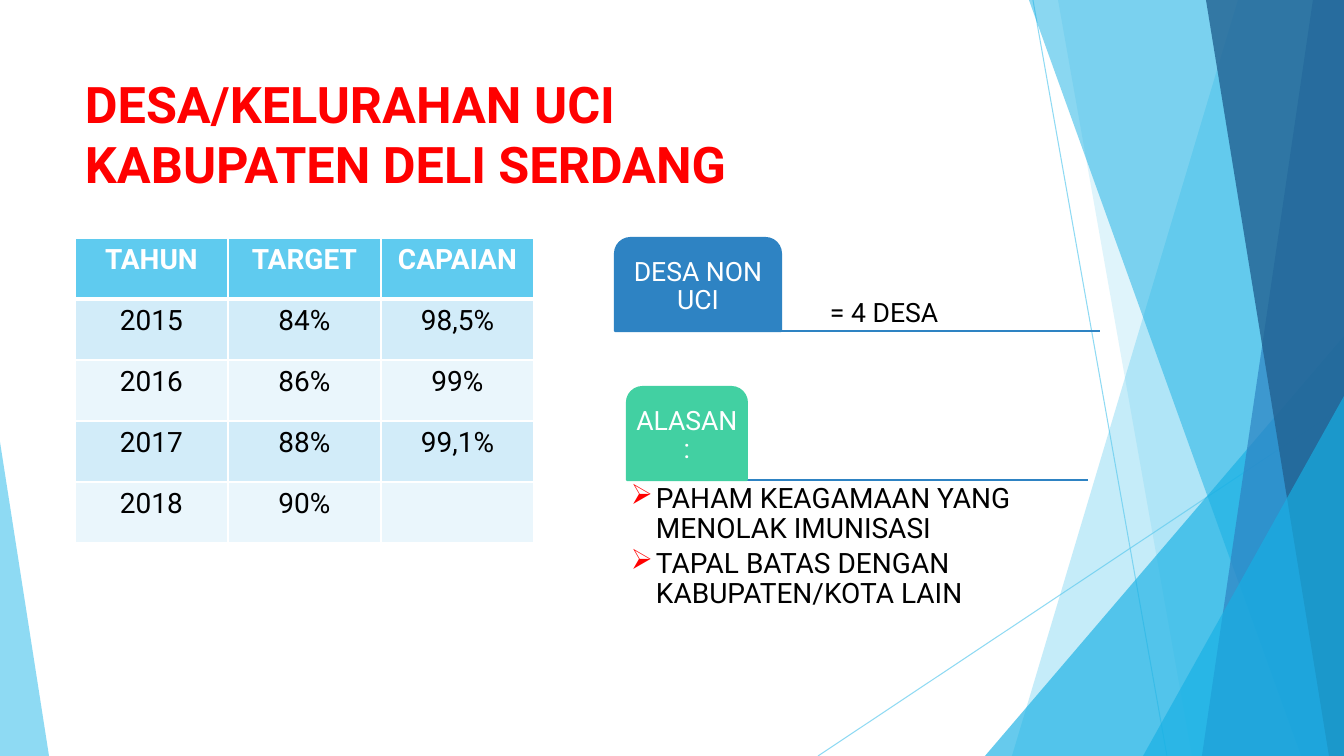
from lxml import etree
from pptx import Presentation
from pptx.dml.color import RGBColor
from pptx.enum.shapes import MSO_CONNECTOR, MSO_SHAPE
from pptx.enum.text import MSO_ANCHOR, PP_ALIGN
from pptx.oxml.ns import qn
from pptx.util import Pt

PX = 914400 / 100.8
FONT = "Roboto"
SKY, AZURE, BLUE, NAVY, GREEN = "5FCBEF", "17B0E4", "2E83C3", "226292", "42D0A2"
WHITE, BLACK, RED = "FFFFFF", "000000", "FF0000"
BANDS = ("D2ECF9", "EAF6FC")

ROWS = [
    ("TAHUN", "TARGET", "CAPAIAN"),
    ("2015", "84%", "98,5%"),
    ("2016", "86%", "99%"),
    ("2017", "88%", "99,1%"),
    ("2018", "90%", ""),
]
REASONS = [
    "PAHAM KEAGAMAAN YANG MENOLAK IMUNISASI",
    "TAPAL BATAS DENGAN KABUPATEN/KOTA LAIN",
]
# Translucent panels: corner points, colour, opacity in percent
PANELS = [
    ([(1238, 0), (1344, 0), (1344, 756), (1012, 756)], SKY, 36),
    ([(1058, 0), (1344, 0), (1344, 756), (1192, 756)], SKY, 20),
    ([(1344, 336), (1344, 756), (985, 756)], AZURE, 66),
    ([(1029, 0), (1344, 0), (1344, 756), (1301, 756)], AZURE, 50),
    ([(1313, 0), (1344, 0), (1344, 756), (1202, 756)], BLUE, 70),
    ([(1206, 0), (1344, 0), (1344, 756), (1329, 756)], NAVY, 80),
    ([(1344, 396), (1344, 756), (1143, 756)], AZURE, 66),
    ([(0, 442), (49, 756), (0, 756)], SKY, 70),
]


def emu(*lengths):
    return [round(v * PX) for v in lengths]


def rgb(value):
    return RGBColor.from_string(value)


def sub(parent, tag, **attrs):
    return etree.SubElement(parent, qn(tag), attrs)


def set_fill(fill, color, opacity=100):
    fill.solid()
    fill.fore_color.rgb = rgb(color)
    if opacity < 100:
        clr = fill._xPr.find(".//" + qn("a:srgbClr"))
        sub(clr, "a:alpha", val=str(opacity * 1000))


def add_panel(s, points, color, opacity):
    builder = s.shapes.build_freeform(*points[0], scale=PX)
    builder.add_line_segments(points[1:], close=True)
    sp = builder.convert_to_shape()
    sp.shadow.inherit = False
    set_fill(sp.fill, color, opacity)
    sp.line.fill.background()


def add_line(s, x1, y1, x2, y2, color, width, opacity=100):
    ln = s.shapes.add_connector(MSO_CONNECTOR.STRAIGHT, *emu(x1, y1, x2, y2))
    ln.line.width = Pt(width)
    set_fill(ln.line.fill, color, opacity)
    sub(ln._element.spPr, "a:effectLst")


def format_text(p, text, size, color, bold=False, **para):
    p.text = text
    for name, value in para.items():
        setattr(p, name, value)
    fmt = {"name": FONT, "size": Pt(size), "bold": bold}
    for r in p.runs:
        for name, value in fmt.items():
            setattr(r.font, name, value)
        r.font.color.rgb = rgb(color)


def set_frame(tf, anchor, inset_x, inset_y):
    left, top = emu(inset_x, inset_y)
    fmt = {"word_wrap": True, "vertical_anchor": anchor,
           "margin_left": left, "margin_right": left,
           "margin_top": top, "margin_bottom": top}
    for name, value in fmt.items():
        setattr(tf, name, value)


def add_text(s, box, anchor=MSO_ANCHOR.TOP, inset_x=4, inset_y=4):
    tf = s.shapes.add_textbox(*emu(*box)).text_frame
    set_frame(tf, anchor, inset_x, inset_y)
    return tf


def add_tab(s, box, text, color):
    sp = s.shapes.add_shape(MSO_SHAPE.ROUND_2_SAME_RECTANGLE, *emu(*box))
    sp.shadow.inherit = False
    sp.adjustments[0], sp.adjustments[1] = 0.167, 0
    set_fill(sp.fill, color)
    set_fill(sp.line.fill, color)
    sp.line.width = Pt(1.5)
    set_frame(sp.text_frame, MSO_ANCHOR.MIDDLE, 4, 4)
    format_text(sp.text_frame.paragraphs[0], text, 19, WHITE,
                alignment=PP_ALIGN.CENTER, line_spacing=0.9)


def add_bullet(p, char, color, indent):
    pPr = p._p.get_or_add_pPr()
    left = emu(indent)[0]
    pPr.set("marL", str(left))
    pPr.set("indent", str(-left))
    sub(sub(pPr, "a:buClr"), "a:srgbClr", val=color)
    sub(pPr, "a:buChar", char=char)


def set_borders(cell, widths):
    tcPr = cell._tc.get_or_add_tcPr()
    for i, (side, width) in enumerate(widths.items()):
        ln = etree.Element(qn("a:ln" + side), w=str(Pt(width)))
        sub(sub(ln, "a:solidFill"), "a:srgbClr", val=WHITE)
        tcPr.insert(i, ln)


def add_grid(s, x, y, col_w, row_h, rows):
    size = emu(x, y, col_w * len(rows[0]), row_h * len(rows))
    table = s.shapes.add_table(len(rows), len(rows[0]), *size).table
    for i, row in enumerate(rows):
        head = i == 0
        for j, text in enumerate(row):
            cell = table.cell(i, j)
            set_fill(cell.fill, SKY if head else BANDS[(i - 1) % 2])
            set_borders(cell, {"L": 1, "R": 1, "T": 3 if i == 1 else 1,
                               "B": 3 if head else 1})
            format_text(cell.text_frame.paragraphs[0], text, 20,
                        WHITE if head else BLACK, head,
                        alignment=PP_ALIGN.CENTER)


def main():
    prs = Presentation()
    prs.slide_width, prs.slide_height = emu(1344, 756)
    s = prs.slides.add_slide(prs.slide_layouts[6])

    # Background facets
    add_line(s, 1033, 0, 1167, 756, SKY, 0.75, 70)
    add_line(s, 1344, 406, 818, 756, SKY, 0.75, 70)
    for points, color, opacity in PANELS:
        add_panel(s, points, color, opacity)

    # Title
    tf = add_text(s, (75, 68, 948, 145), inset_x=10, inset_y=5)
    format_text(tf.paragraphs[0], "DESA/KELURAHAN UCI\vKABUPATEN DELI SERDANG",
                36, RED, True)

    # Coverage by year
    add_grid(s, 75, 238, 153, 61, ROWS)

    # Villages and reasons
    add_line(s, 627, 480, 1088, 480, BLUE, 1.5)
    add_line(s, 638, 331, 1100, 331, BLUE, 1.5)
    add_tab(s, (615, 238, 166, 93), "DESA NON UCI", BLUE)
    add_tab(s, (627, 387, 120, 93), "ALASAN:", GREEN)
    tf = add_text(s, (826, 239, 207, 93), MSO_ANCHOR.BOTTOM)
    format_text(tf.paragraphs[0], "= 4 DESA", 19, BLACK, line_spacing=0.9)

    tf = add_text(s, (627, 480, 462, 185))
    for i, reason in enumerate(REASONS):
        p = tf.add_paragraph() if i else tf.paragraphs[0]
        format_text(p, reason, 20, BLACK, line_spacing=0.9, space_after=Pt(3.5))
        add_bullet(p, "➢", RED, 25)

    prs.save("out.pptx")


if __name__ == "__main__":
    main()
